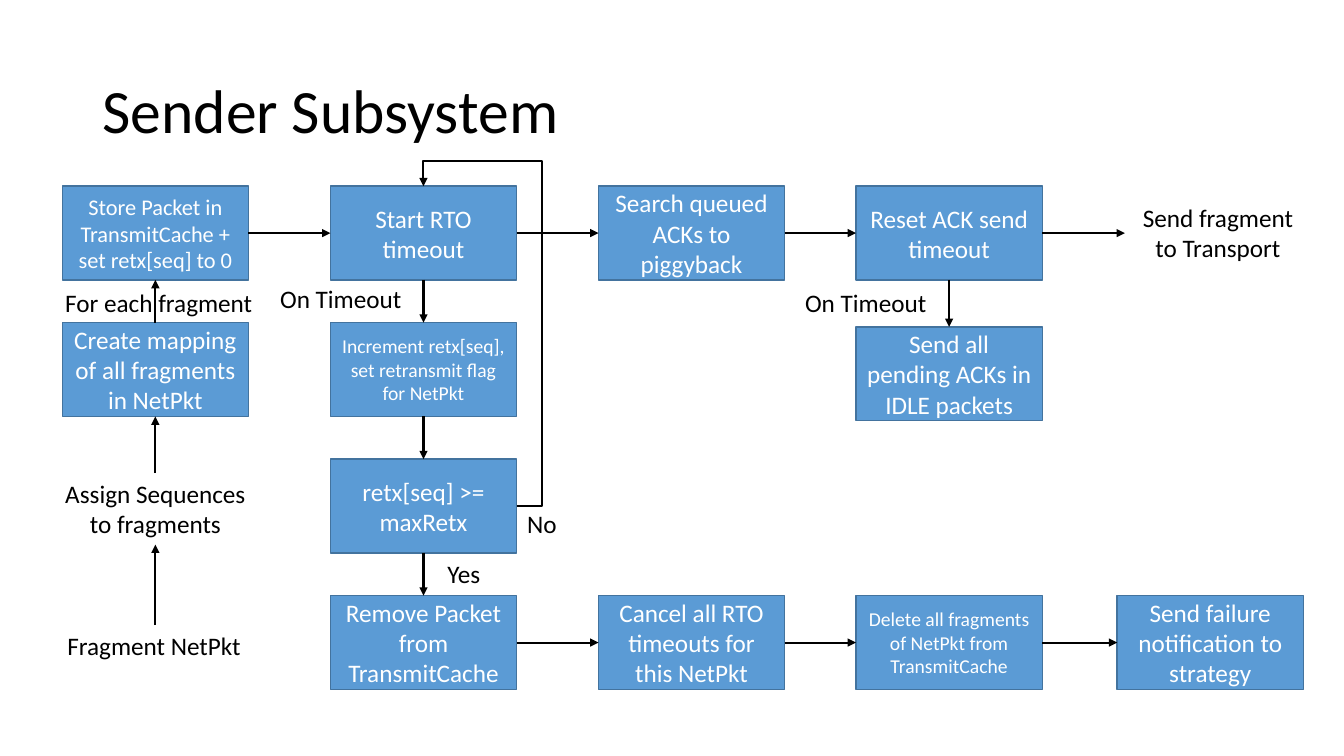
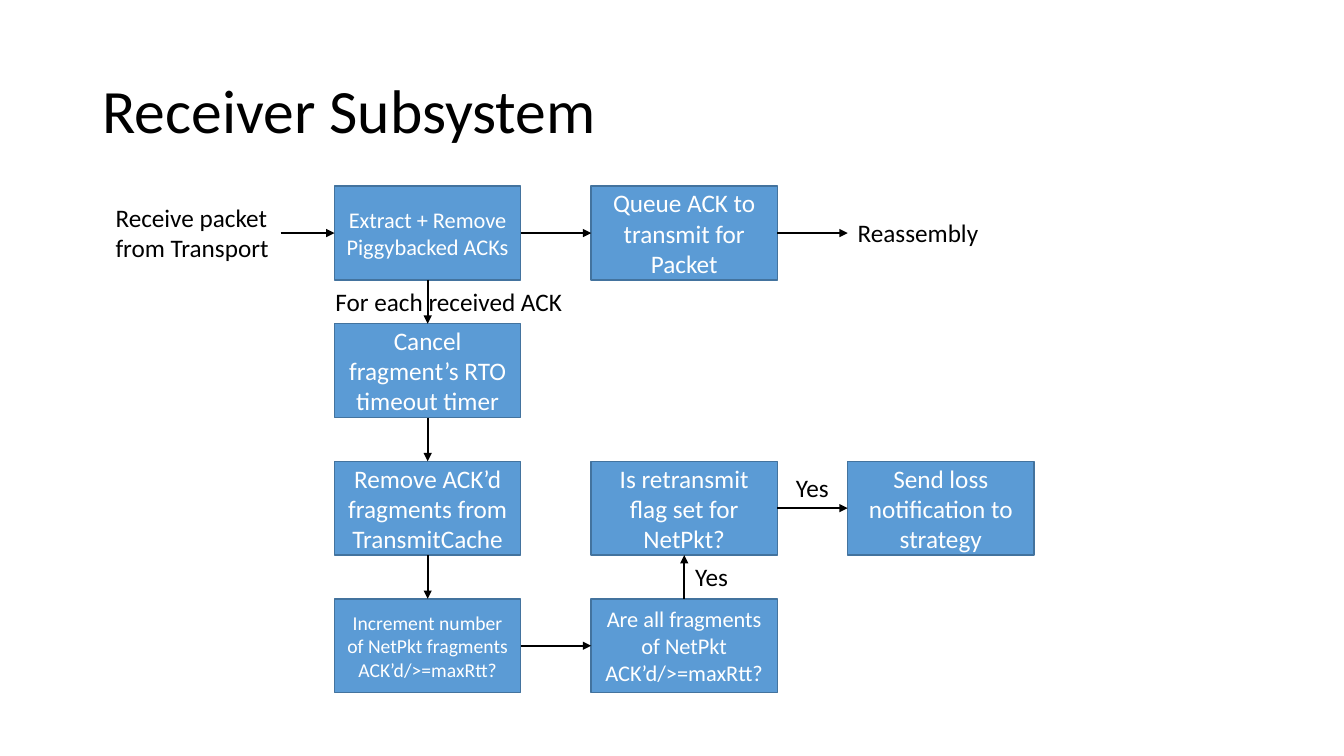
from lxml import etree
from pptx import Presentation
from pptx.dml.color import RGBColor
from pptx.enum.shapes import MSO_CONNECTOR, MSO_SHAPE
from pptx.enum.text import MSO_ANCHOR, MSO_AUTO_SIZE, PP_ALIGN
from pptx.oxml.ns import qn
from pptx.util import Pt

RECTANGLE = MSO_SHAPE.RECTANGLE
STRAIGHT, ELBOW = MSO_CONNECTOR.STRAIGHT, MSO_CONNECTOR.ELBOW
LEFT, CENTER = PP_ALIGN.LEFT, PP_ALIGN.CENTER
MIDDLE = MSO_ANCHOR.MIDDLE
FIT_SHAPE, NO_FIT = MSO_AUTO_SIZE.SHAPE_TO_FIT_TEXT, MSO_AUTO_SIZE.NONE
TITLE_ONLY = 5
SITE_TOP, SITE_LEFT, SITE_BOTTOM, SITE_RIGHT = range(4)
EAST = (SITE_RIGHT, SITE_LEFT)
SOUTH = (SITE_BOTTOM, SITE_TOP)
NORTH = (SITE_TOP, SITE_BOTTOM)

COLORS = {"box": "5B9BD5", "border": "43739E", "ink": "000000", "box text": "FFFFFF"}
FONT = "Calibri"
BOX_WIDTH, BOX_HEIGHT = 133, 67
FIRST_ROW = 133


def color(name):
    return RGBColor.from_string(COLORS[name])


class FlowDeck:
    def __init__(self):
        self.presentation = Presentation()
        self.presentation.slide_width = Pt(960)
        self.presentation.slide_height = Pt(540)
        self.slide = None

    def set_text(self, shape, text, size, ink, alignment):
        shape.text_frame.text = text
        for paragraph in shape.text_frame.paragraphs:
            paragraph.alignment = alignment
            paragraph.font.name = FONT
            paragraph.font.size = Pt(size)
            paragraph.font.color.rgb = color(ink)

    def add_slide(self, title):
        layout = self.presentation.slide_layouts[TITLE_ONLY]
        self.slide = self.presentation.slides.add_slide(layout)
        shape = self.slide.shapes.title
        shape.left, shape.top, shape.width, shape.height = Pt(66), Pt(28.75), Pt(828), Pt(104.4)
        self.set_text(shape, title, 44, "ink", LEFT)
        shape.text_frame.paragraphs[0].line_spacing = 0.9
        shape.text_frame.vertical_anchor = MIDDLE
        shape.text_frame.auto_size = NO_FIT

    def box(self, left, top, text, size=18):
        shape = self.slide.shapes.add_shape(
            RECTANGLE, Pt(left), Pt(top), Pt(BOX_WIDTH), Pt(BOX_HEIGHT))
        shape.shadow.inherit = False
        shape.fill.solid()
        shape.fill.fore_color.rgb = color("box")
        shape.line.color.rgb = color("border")
        shape.line.width = Pt(1)
        shape.text_frame.word_wrap = True
        shape.text_frame.vertical_anchor = MIDDLE
        self.set_text(shape, text, size, "box text", CENTER)
        return shape

    def label(self, left, top, width, text, height=29, alignment=LEFT, wrap=False):
        shape = self.slide.shapes.add_textbox(Pt(left), Pt(top), Pt(width), Pt(height))
        shape.text_frame.word_wrap = wrap
        shape.text_frame.auto_size = FIT_SHAPE
        self.set_text(shape, text, 18, "ink", alignment)
        return shape

    def arrow(self, start, end, sites, kind=STRAIGHT):
        connector = self.slide.shapes.add_connector(kind, 0, 0, 0, 0)
        connector.begin_connect(start, sites[0])
        connector.end_connect(end, sites[1])
        connector.line.color.rgb = color("ink")
        connector.line.width = Pt(1.5)
        properties = connector.element.spPr
        line = properties.find(qn("a:ln"))
        etree.SubElement(line, qn("a:tailEnd"), type="triangle")
        etree.SubElement(properties, qn("a:effectLst"))
        return connector

    def chain(self, shapes, sites):
        for start, end in zip(shapes, shapes[1:]):
            self.arrow(start, end, sites)

    def loop_back(self, start, end, across, up):
        connector = self.arrow(start, end, (SITE_RIGHT, SITE_TOP), ELBOW)
        geometry = connector.element.spPr.find(qn("a:prstGeom"))
        geometry.set("prst", "bentConnector4")
        adjustments = geometry.find(qn("a:avLst"))
        if adjustments is None:
            adjustments = etree.SubElement(geometry, qn("a:avLst"))
        for name, value in (("adj1", across), ("adj2", up)):
            etree.SubElement(adjustments, qn("a:gd"), name=name, fmla=f"val {value}")


def build_sender(deck):
    deck.add_slide("Sender Subsystem")
    columns = [44.5, 236, 427.5, 611.5, 798]
    rows = [FIRST_ROW + 97.5 * row for row in range(4)]

    store = deck.box(columns[0], rows[0], "Store Packet in TransmitCache + set retx[seq] to 0", 16)
    start = deck.box(columns[1], rows[0], "Start RTO timeout")
    search = deck.box(columns[2], rows[0], "Search queued ACKs to piggyback")
    reset = deck.box(columns[3], rows[0], "Reset ACK send timeout")
    mapping = deck.box(columns[0], rows[1], "Create mapping of all fragments in NetPkt")
    increment = deck.box(columns[1], rows[1], "Increment retx[seq], set retransmit flag for NetPkt", 14)
    idle = deck.box(columns[3], 233.5, "Send all pending ACKs in IDLE packets")
    check = deck.box(columns[1], rows[2], "retx[seq] >= maxRetx")
    failure_steps = [
        deck.box(left, rows[3], text, size)
        for left, text, size in zip(
            columns[1:],
            ("Remove Packet from TransmitCache",
             "Cancel all RTO timeouts for this NetPkt",
             "Delete all fragments of NetPkt from TransmitCache",
             "Send failure notification to strategy"),
            (18, 18, 14, 18))
    ]

    transport = deck.label(803.5, 141, 133, "Send fragment to Transport", 51, CENTER, True)
    assign = deck.label(38.5, 338, 145, "Assign Sequences\nto fragments", 51, CENTER)
    fragment = deck.label(41, 446.5, 140, "Fragment NetPkt")
    deck.label(39.5, 201.5, 150, "For each fragment")
    deck.label(193, 199, 102, "On Timeout")
    deck.label(568, 201.5, 102, "On Timeout")
    deck.label(369.5, 359.5, 36, "No")
    deck.label(312.5, 395.5, 38, "Yes")

    deck.chain([fragment, assign, mapping, store], NORTH)
    deck.chain([store, start, search, reset, transport], EAST)
    deck.chain([start, increment, check, failure_steps[0]], SOUTH)
    deck.chain(failure_steps, EAST)
    deck.arrow(reset, idle, SOUTH)
    deck.loop_back(check, start, -27000, 107900)


def build_receiver(deck):
    deck.add_slide("Receiver Subsystem")
    columns = [239 + 183.25 * column for column in range(3)]
    rows = [FIRST_ROW + 98.25 * row for row in range(4)]

    ack_steps = [
        deck.box(columns[0], top, text, size)
        for top, text, size in zip(
            rows,
            ("Extract + Remove Piggybacked ACKs",
             "Cancel fragment’s RTO timeout timer",
             "Remove ACK’d fragments from TransmitCache",
             "Increment number of NetPkt fragments ACK’d/>=maxRtt?"),
            (16, 18, 18, 14))
    ]
    queue = deck.box(columns[1], rows[0], "Queue ACK to transmit for Packet")
    flag = deck.box(columns[1], rows[2], "Is retransmit flag set for NetPkt?")
    complete = deck.box(columns[1], rows[3], "Are all fragments of NetPkt ACK’d/>=maxRtt?", 16)
    loss = deck.box(columns[2], rows[2], "Send loss notification to strategy")

    receive = deck.label(75.5, 141, 125, "Receive packet\nfrom Transport", 51)
    reassembly = deck.label(columns[2], 152, 101.5, "Reassembly")
    deck.label(232.5, 201, 178.5, "For each received ACK")
    deck.label(561.5, 334, 38, "Yes")
    deck.label(489.5, 397.5, 38, "Yes")

    deck.chain([receive, ack_steps[0], queue, reassembly], EAST)
    deck.chain(ack_steps, SOUTH)
    deck.arrow(ack_steps[-1], complete, EAST)
    deck.arrow(complete, flag, NORTH)
    deck.arrow(flag, loss, EAST)


def main():
    deck = FlowDeck()
    build_sender(deck)
    build_receiver(deck)
    deck.presentation.save("out.pptx")


if __name__ == "__main__":
    main()
